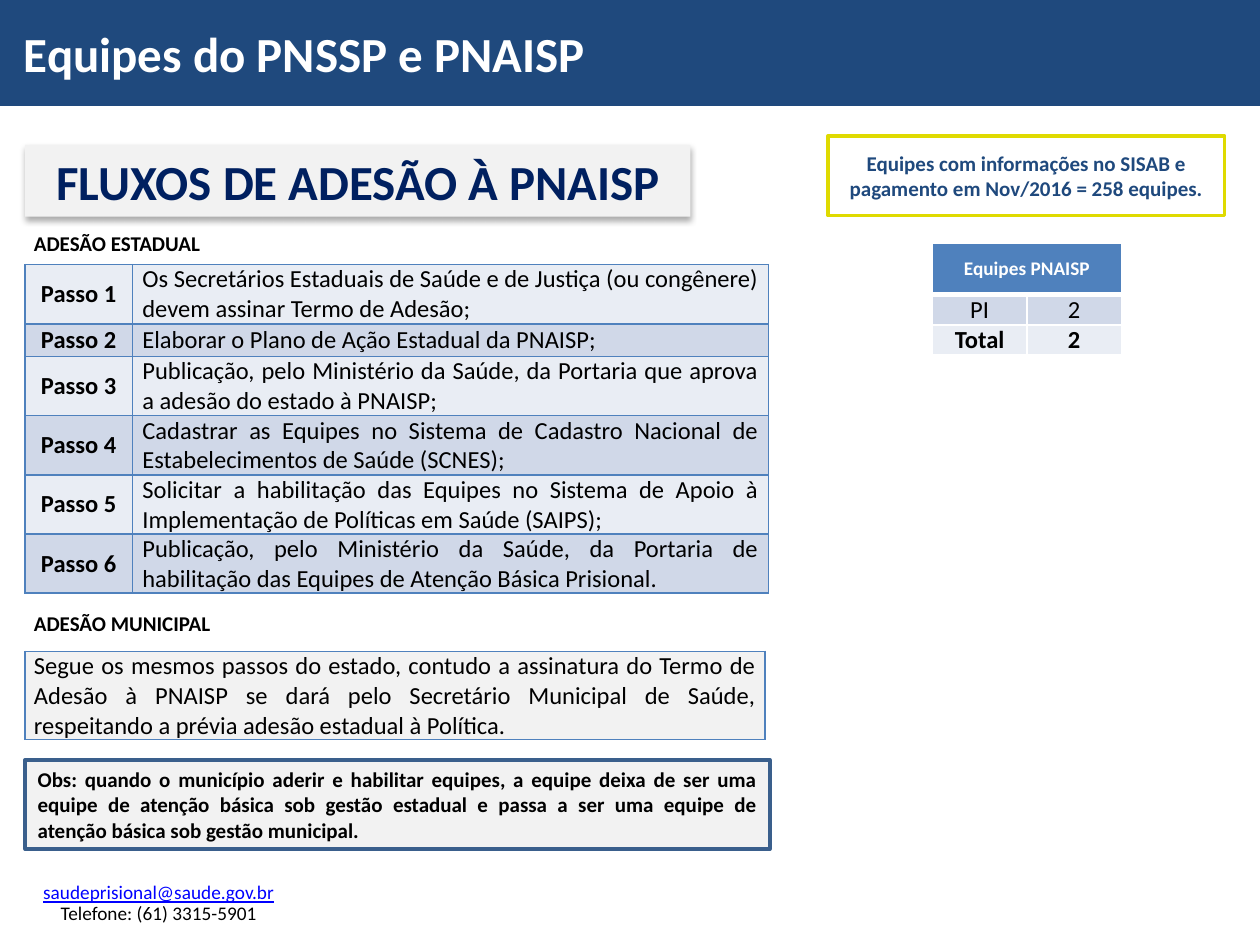
from lxml.etree import SubElement
from pptx import Presentation
from pptx.dml.color import RGBColor
from pptx.enum.shapes import MSO_SHAPE
from pptx.enum.text import MSO_ANCHOR, MSO_AUTO_SIZE, PP_ALIGN
from pptx.oxml.ns import qn
from pptx.util import Inches, Pt

WHITE = RGBColor(0xFF, 0xFF, 0xFF)
BLACK = RGBColor(0, 0, 0)
NAVY = RGBColor(0x1F, 0x49, 0x7D)
DARK_NAVY = RGBColor(0x00, 0x20, 0x60)
BLUE = RGBColor(0x4F, 0x81, 0xBD)
FRAME_BLUE = RGBColor(0x3A, 0x5F, 0x8C)
LINK_BLUE = RGBColor(0, 0, 0xFF)
YELLOW = RGBColor(0xDF, 0xDA, 0x00)
GRAY = RGBColor(0xF2, 0xF2, 0xF2)
BAND_DARK = RGBColor(0xD0, 0xD8, 0xE8)
BAND_LIGHT = RGBColor(0xE9, 0xED, 0xF4)
LEFT, CENTER, JUSTIFY = PP_ALIGN.LEFT, PP_ALIGN.CENTER, PP_ALIGN.JUSTIFY

STEPS = [
    "Os Secretários Estaduais de Saúde e de Justiça (ou congênere) devem assinar Termo de Adesão;",
    "Elaborar o Plano de Ação Estadual da PNAISP;",
    "Publicação, pelo Ministério da Saúde, da Portaria que aprova a adesão do estado à PNAISP;",
    "Cadastrar as Equipes no Sistema de Cadastro Nacional de Estabelecimentos de Saúde (SCNES);",
    "Solicitar a habilitação das Equipes no Sistema de Apoio à Implementação de Políticas em Saúde (SAIPS);",
    "Publicação, pelo Ministério da Saúde, da Portaria de habilitação das Equipes de Atenção Básica Prisional.",
]


def write(tf, text, size=14, color=BLACK, bold=False, underline=False,
          align=LEFT, spacing=None, font="Calibri"):
    """Fill the first paragraph of a text frame, or append another one."""
    p = tf.add_paragraph() if tf.text else tf.paragraphs[0]
    p.alignment = align
    if spacing:
        p.line_spacing = spacing
    r = p.add_run()
    r.text = text
    r.font.name, r.font.size = font, Pt(size)
    r.font.bold, r.font.underline = bold, underline
    r.font.color.rgb = color


class SlideBuilder:
    def __init__(self, slide):
        self.s = slide

    def title(self, text, box):
        sp = self.s.shapes.title
        sp.left, sp.top, sp.width, sp.height = map(Inches, box)
        sp.fill.solid()
        sp.fill.fore_color.rgb = NAVY
        tf = sp.text_frame
        tf.auto_size = MSO_AUTO_SIZE.NONE
        tf.vertical_anchor = MSO_ANCHOR.MIDDLE
        tf.margin_left = Inches(0.19)
        write(tf, text, size=28, color=WHITE, bold=True)

    def text(self, box):
        tf = self.s.shapes.add_textbox(*map(Inches, box)).text_frame
        tf.word_wrap = True
        return tf

    def panel(self, text, box, fill=None, line=None, **fmt):
        sp = self.s.shapes.add_shape(MSO_SHAPE.RECTANGLE, *map(Inches, box))
        sp.shadow.inherit = False
        if fill is None:
            sp.fill.background()
        else:
            sp.fill.solid()
            sp.fill.fore_color.rgb = fill
        if line is None:
            sp.line.fill.background()
        else:
            sp.line.color.rgb = line
            sp.line.width = Pt(2)
        sp.text_frame.word_wrap = True
        write(sp.text_frame, text, bold=True, **fmt)
        return sp

    def drop_shadow(self, sp):
        effects = sp._element.spPr.find(qn("a:effectLst"))
        shadow = SubElement(effects, qn("a:outerShdw"), blurRad=str(Pt(3.5)),
                            dist=str(Pt(2.2)), dir="5400000", rotWithShape="0")
        color = SubElement(shadow, qn("a:srgbClr"), val=str(BLACK))
        SubElement(color, qn("a:alpha"), val="32000")

    def table(self, left, top, cols, rows):
        shape = self.s.shapes.add_table(len(rows), len(cols), Inches(left), Inches(top),
                                        Inches(sum(cols)), Inches(sum(rows)))
        table = shape.table
        table.first_row = table.horz_banding = False
        for col, width in zip(table.columns, cols):
            col.width = Inches(width)
        for row, height in zip(table.rows, rows):
            row.height = Inches(height)
        return table

    def cell(self, cell, text, fill, border, side=0.08, anchor=MSO_ANCHOR.MIDDLE,
             widths=(1, 1, 1, 1), **fmt):
        """Border widths run left, right, top, bottom."""
        tc_pr = cell._tc.get_or_add_tcPr()
        for edge, width in zip("LRTB", widths):
            ln = SubElement(tc_pr, qn(f"a:ln{edge}"), w=str(Pt(width)))
            SubElement(SubElement(ln, qn("a:solidFill")), qn("a:srgbClr"), val=str(border))
        cell.fill.solid()
        cell.fill.fore_color.rgb = fill
        cell.vertical_anchor = anchor
        cell.margin_left = cell.margin_right = Inches(side)
        cell.margin_top = cell.margin_bottom = 0
        if text:
            write(cell.text_frame, text, **fmt)


def main():
    prs = Presentation()
    prs.slide_width, prs.slide_height = Inches(10), Inches(7.5)
    b = SlideBuilder(prs.slides.add_slide(prs.slide_layouts[5]))

    b.title("Equipes do PNSSP e PNAISP", (0, 0, 10, 0.84))

    # Team count by state
    teams = b.table(7.4, 1.93, [0.75] * 2, [0.41, 0.24, 0.24])
    teams.cell(0, 0).merge(teams.cell(0, 1))
    for c, text in enumerate(["Equipes PNAISP", ""]):
        b.cell(teams.cell(0, c), text, BLUE, WHITE, widths=(1, 1, 1, 3),
               size=11, color=WHITE, bold=True, align=CENTER)
    for i, (values, fill, top) in enumerate(
            [(("PI", "2"), BAND_DARK, 3), (("Total", "2"), BAND_LIGHT, 1)], 1):
        for c, text in enumerate(values):
            b.cell(teams.cell(i, c), text, fill, WHITE, side=0.01, anchor=MSO_ANCHOR.BOTTOM,
                   widths=(1, 1, top, 1), bold=i == 2, align=CENTER)

    # Payment note
    b.panel("Equipes com informações no SISAB e pagamento em Nov/2016 = 258 equipes.",
            (6.57, 1.08, 3.15, 0.63), line=YELLOW, size=12, color=NAVY, align=CENTER)

    # Contact
    contact = b.text((0, 6.96, 2.52, 0.43))
    write(contact, "saudeprisional@saude.gov.br", size=11, color=LINK_BLUE,
          underline=True, align=CENTER, spacing=0.9)
    write(contact, "Telefone: (61) 3315-5901", size=11, align=CENTER, spacing=0.9)

    # Section heading
    heading = b.panel("FLUXOS DE ADESÃO À PNAISP", (0.2, 1.15, 5.28, 0.57),
                      fill=GRAY, size=28, color=DARK_NAVY, align=CENTER)
    b.drop_shadow(heading)

    # State steps; the second one takes a single line
    steps = b.table(0.2, 2.1, [0.85, 5.05], [0.47, 0.26] + [0.47] * 4)
    for i, text in enumerate(STEPS):
        fill = BAND_DARK if i % 2 else BAND_LIGHT
        b.cell(steps.cell(i, 0), f"Passo {i + 1}", fill, BLUE, bold=True, align=CENTER)
        b.cell(steps.cell(i, 1), text, fill, BLUE, align=JUSTIFY)

    # Subheadings
    for text, top in [("ADESÃO MUNICIPAL", 4.8), ("ADESÃO ESTADUAL", 1.78)]:
        write(b.text((0.17, top, 2.78, 0.3)), text, size=12, bold=True)

    # Municipal flow
    municipal = b.table(0.2, 5.17, [5.87], [0.7])
    b.cell(municipal.cell(0, 0),
           "Segue os mesmos passos do estado, contudo a assinatura do Termo de Adesão à PNAISP "
           "se dará pelo Secretário Municipal de Saúde, respeitando a prévia adesão estadual "
           "à Política.", GRAY, BLUE, side=0.07, align=JUSTIFY)

    # Remark
    b.panel("Obs: quando o município aderir e habilitar equipes, a equipe deixa de ser uma equipe "
            "de atenção básica sob gestão estadual e passa a ser uma equipe de atenção básica "
            "sob gestão municipal.", (0.2, 6.03, 5.91, 0.71),
            fill=GRAY, line=FRAME_BLUE, size=12, align=JUSTIFY)

    prs.save("out.pptx")


if __name__ == "__main__":
    main()
